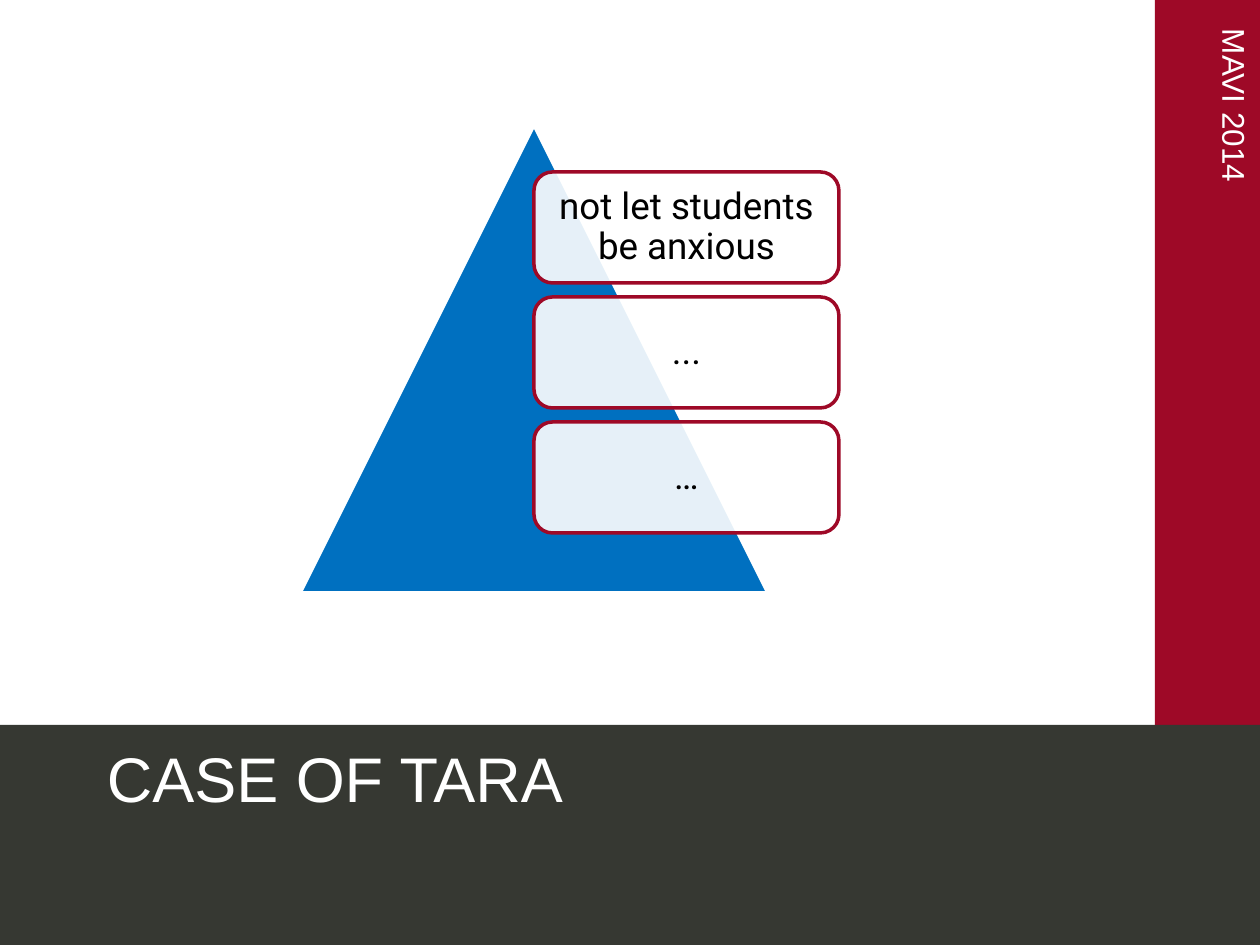
from lxml.etree import SubElement
from pptx import Presentation
from pptx.dml.color import RGBColor
from pptx.enum.shapes import MSO_SHAPE
from pptx.enum.text import MSO_ANCHOR, PP_ALIGN
from pptx.oxml.ns import qn
from pptx.util import Emu, Pt

WHITE = RGBColor(0xFF, 0xFF, 0xFF)
BLACK = RGBColor(0x00, 0x00, 0x00)
CRIMSON = RGBColor(0x9E, 0x09, 0x27)
CHARCOAL = RGBColor(0x36, 0x38, 0x32)
BLUE = RGBColor(0x00, 0x70, 0xC0)

GOALS = ["not let students be anxious", "...", "…"]


def px(length):
    """Turn px into EMU at 126 px to the inch."""
    return Emu(round(length * 914400 / 126))


def add_block(page, kind, box, fill, line=None):
    """Add a filled preset shape, outlined only when a line colour is given."""
    block = page.shapes.add_shape(kind, *map(px, box))
    block.shadow.inherit = False
    block.fill.solid()
    block.fill.fore_color.rgb = fill
    if line is None:
        block.line.fill.background()
    else:
        block.line.color.rgb = line
        block.line.width = Pt(2)
    return block


def write(shape, text, font, size, color, align, inset):
    """Write one vertically centred paragraph with the given side insets."""
    frame = shape.text_frame
    frame.word_wrap = True
    frame.vertical_anchor = MSO_ANCHOR.MIDDLE
    frame.margin_left = frame.margin_right = px(inset)
    para = frame.paragraphs[0]
    para.text = text
    para.alignment = align
    para.font.name = font
    para.font.size = Pt(size)
    para.font.color.rgb = color
    return para


def add_side_band(page, left, top, width, height):
    """Draw the crimson band with the event name running down its right edge."""
    add_block(page, MSO_SHAPE.RECTANGLE, (left, top, width, height), CRIMSON)
    length, depth = 502, 50
    center_x, center_y = left + width - 25, top + length / 2
    label = page.shapes.add_textbox(
        px(center_x - length / 2), px(center_y - depth / 2), px(length), px(depth))
    label.rotation = 90
    write(label, "MAVI 2014", "Arial", 18, WHITE, PP_ALIGN.LEFT, 29)


def add_title_band(page, left, top, width, height):
    """Draw the dark band with the slide title in its upper part."""
    add_block(page, MSO_SHAPE.RECTANGLE, (left, top, width, height), CHARCOAL)
    title = page.shapes.add_textbox(px(left + 94), px(top), px(1124), px(105))
    write(title, "CASE OF TARA", "Arial", 36, WHITE, PP_ALIGN.LEFT, 13)


def add_goal_card(page, left, top, width, height, text):
    """Draw one translucent rounded card holding a goal."""
    card = add_block(page, MSO_SHAPE.ROUNDED_RECTANGLE,
                     (left, top, width, height), WHITE, CRIMSON)
    color = card.fill._xPr.find(qn("a:solidFill"))[0]
    SubElement(color, qn("a:alpha"), val="90000")
    para = write(card, text, "Roboto", 21, BLACK, PP_ALIGN.CENTER, 11)
    para.line_spacing = 0.9


def add_goal_pyramid(page, left, top, size):
    """Draw the triangle and the column of cards starting at its middle."""
    add_block(page, MSO_SHAPE.ISOSCELES_TRIANGLE, (left, top, size, size), BLUE, WHITE)
    card_height, gap = 111, 14
    for index, goal in enumerate(GOALS):
        card_top = top + 47 + index * (card_height + gap)
        add_goal_card(page, left + size / 2, card_top, 305, card_height, goal)


def main():
    """Build the slide and save the deck."""
    deck = Presentation()
    deck.slide_width, deck.slide_height = px(1260), px(945)
    page = deck.slides.add_slide(deck.slide_layouts[6])
    add_side_band(page, 1155, 0, 105, 945)
    add_title_band(page, 0, 725, 1260, 220)
    add_goal_pyramid(page, 300, 125, 468)
    deck.save("out.pptx")


if __name__ == "__main__":
    main()
